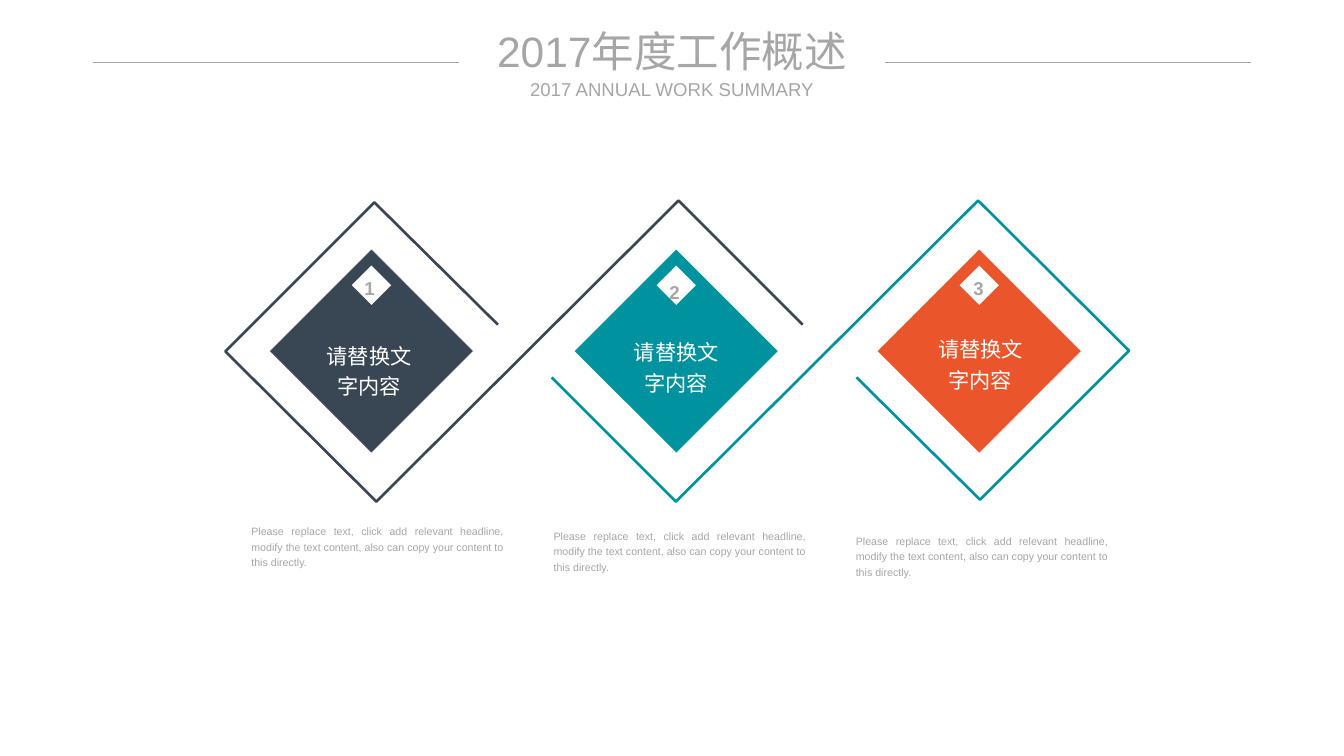
import dataclasses

import pptx
import pptx.dml.color
import pptx.enum.shapes
import pptx.enum.text
import pptx.oxml
import pptx.oxml.ns
import pptx.util

Cm = pptx.util.Cm
Pt = pptx.util.Pt
ALIGN = pptx.enum.text.PP_ALIGN
MIDDLE = pptx.enum.text.MSO_ANCHOR.MIDDLE
TOP = pptx.enum.text.MSO_ANCHOR.TOP


def rgb(value):
    return pptx.dml.color.RGBColor.from_string(value)


@dataclasses.dataclass(frozen=True)
class Theme:
    font: str = "Arial"
    gray: str = "A6A6A6"
    white: str = "FFFFFF"
    slate: str = "394754"
    teal: str = "00939F"
    orange: str = "EA552B"
    title: int = 32
    subtitle: int = 14
    number: int = 14
    label: int = 16
    body: int = 8
    hairline: float = 0.5
    ribbon: float = 2


@dataclasses.dataclass(frozen=True)
class Step:
    number: str
    color: str
    center: float
    number_shift: tuple
    label_shift: tuple


THEME = Theme()
LABEL = "请替换文字内容"
BODY = ("Please replace text, click add relevant headline, modify the text "
        "content, also can copy your content to this directly.")
STEPS = [
    Step("1", THEME.slate, 3.88, (-0.05, 0.01), (-0.06, 0.44)),
    Step("2", THEME.teal, 11.98, (-0.05, 0.11), (0, 0.34)),
    Step("3", THEME.orange, 20.03, (-0.02, 0.01), (0.03, 0.27)),
]
RIBBON = [(15.34, 3.3), (12.04, 0), (4.01, 8), (0, 4.01), (3.96, 0.05), (7.24, 3.3)]
RIBBON_W, RIBBON_H = 15.34, 8


def write(sp, text, size, color, align=ALIGN.CENTER, anchor=MIDDLE,
          spacing=1.0, bold=False, wrap=True):
    tf = sp.text_frame
    tf.text = text
    tf.word_wrap = wrap
    tf.auto_size = pptx.enum.text.MSO_AUTO_SIZE.NONE
    tf.vertical_anchor = anchor
    tf.margin_left = tf.margin_top = tf.margin_right = tf.margin_bottom = 0
    p = tf.paragraphs[0]
    p.alignment = align
    p.line_spacing = spacing
    font = p.runs[0].font
    font.name = THEME.font
    font.size = Pt(size)
    font.bold = bold
    font.color.rgb = rgb(color)


def add_text(s, x, y, w, h, *args, **kwargs):
    sp = s.shapes.add_textbox(Cm(x), Cm(y), Cm(w), Cm(h))
    write(sp, *args, **kwargs)


def add_centered_text(s, cx, cy, w, h, *args, **kwargs):
    add_text(s, cx - w / 2, cy - h / 2, w, h, *args, **kwargs)


def add_rule(s, x1, x2, y):
    line = s.shapes.add_connector(
        pptx.enum.shapes.MSO_CONNECTOR.STRAIGHT, Cm(x1), Cm(y), Cm(x2), Cm(y))
    line.line.color.rgb = rgb(THEME.gray)
    line.line.width = Pt(THEME.hairline)
    pptx.oxml.ns.qn("a:effectLst")
    line._element.spPr.append(pptx.oxml.parse_xml(
        '<a:effectLst xmlns:a="http://schemas.openxmlformats.org/drawingml/2006/main"/>'))


def add_ribbon(s, x, y, points, color):
    path = [(Cm(x + px), Cm(y + py)) for px, py in points]
    builder = s.shapes.build_freeform(*path[0])
    builder.add_line_segments(path[1:], close=False)
    sp = builder.convert_to_shape()
    sp.shadow.inherit = False
    sp.fill.background()
    sp.line.color.rgb = rgb(color)
    sp.line.width = Pt(THEME.ribbon)


def add_diamond(s, cx, cy, side, color, outlined=False):
    sp = s.shapes.add_shape(
        pptx.enum.shapes.MSO_SHAPE.RECTANGLE,
        Cm(cx - side / 2), Cm(cy - side / 2), Cm(side), Cm(side))
    sp.rotation = 315
    sp.shadow.inherit = False
    sp.fill.solid()
    sp.fill.fore_color.rgb = rgb(color)
    if outlined:
        sp.line.color.rgb = rgb(THEME.white)
        sp.line.width = Pt(THEME.hairline)
    else:
        sp.line.fill.background()


def add_header(s, x, y, w):
    title = s.shapes.title
    title.left, title.top = Cm(x + (w - 10.97) / 2), Cm(y)
    title.width, title.height = Cm(10.97), Cm(1.37)
    write(title, "2017年度工作概述", THEME.title, THEME.gray)
    add_text(s, x + (w - 7.8) / 2, y + 1.4, 7.8, 0.61,
             "2017 ANNUAL WORK SUMMARY", THEME.subtitle, THEME.gray)
    add_rule(s, x, x + 9.73, y + 0.99)
    add_rule(s, x + w - 9.73, x + w, y + 0.99)


def add_step(s, step, x, y):
    cx, cy = x + step.center, y + RIBBON_H / 2
    badge_y = cy - 1.75
    add_diamond(s, cx, cy, 3.84, step.color, outlined=True)
    add_diamond(s, cx, badge_y, 0.74, THEME.white)
    dx, dy = step.number_shift
    add_centered_text(s, cx + dx, badge_y + dy, 0.28, 0.66, step.number,
                      THEME.number, THEME.gray, spacing=1.2, bold=True, wrap=False)
    dx, dy = step.label_shift
    add_centered_text(s, cx + dx, cy + dy, 2.5, 1.57, LABEL,
                      THEME.label, THEME.white, anchor=TOP, spacing=1.2)


def add_process(s, x, y):
    turned = [(RIBBON_W - px, RIBBON_H - py) for px, py in RIBBON]
    add_ribbon(s, x, y, RIBBON, THEME.slate)
    add_ribbon(s, x + 8.67, y, turned, THEME.teal)
    for step in STEPS:
        add_step(s, step, x, y)


def add_captions(s, x, y):
    for i in range(len(STEPS)):
        add_text(s, x + 8.03 * i, y + 0.13 * i, 6.71, 1.19, BODY, THEME.body,
                 THEME.gray, align=ALIGN.JUSTIFY, anchor=TOP, spacing=1.2)


def main():
    prs = pptx.Presentation()
    prs.slide_width, prs.slide_height = Cm(35.71), Cm(20.09)
    s = prs.slides.add_slide(prs.slide_layouts[5])
    add_header(s, 2.46, 0.66, 30.79)
    add_process(s, 5.99, 5.33)
    add_captions(s, 6.68, 13.89)
    prs.save("out.pptx")


if __name__ == "__main__":
    main()
